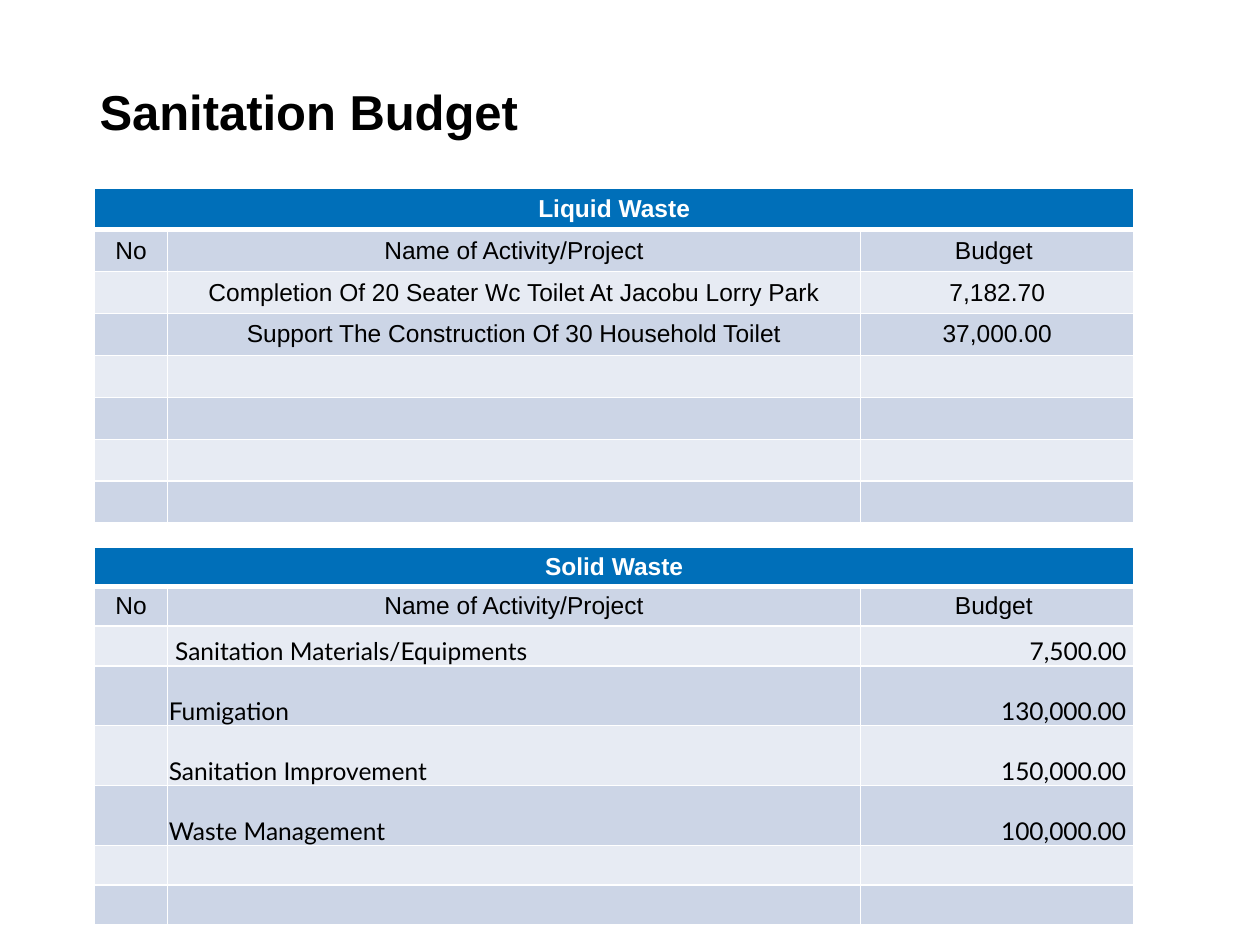
from dataclasses import dataclass

from lxml.etree import SubElement
from pptx import Presentation
from pptx.dml.color import RGBColor
from pptx.enum.text import MSO_ANCHOR as Anchor, PP_ALIGN as Align
from pptx.oxml.ns import qn
from pptx.util import Inches, Pt

SLIDE_W, SLIDE_H = 10, 7.5
LEFT = 0.075 * SLIDE_W
COLUMNS = (0.58, 5.5, 2.17)
HEADINGS = ("No", "Name of Activity/Project", "Budget ")
HEADER_BLUE, BANDS = "006FB9", ("E7EBF3", "CCD5E6")
BLACK, WHITE = "000000", "FFFFFF"


@dataclass
class CellStyle:
    font: str = "Arial"
    color: str = BLACK
    bold: bool = False
    align: Align = Align.CENTER
    anchor: Anchor = Anchor.MIDDLE
    left: float = 0.1
    right: float = 0.1
    bottom: float = 0


@dataclass
class Budget:
    title: str
    top: float
    heights: tuple[float, ...]
    items: tuple[tuple[str, str], ...]
    styles: tuple[CellStyle, CellStyle]


CENTERED = CellStyle()
HEADER = CellStyle(color=WHITE, bold=True)
ACTIVITY = CellStyle("Lato", align=Align.LEFT, anchor=Anchor.BOTTOM, left=0.01, right=0.01)
AMOUNT = CellStyle("Lato", align=Align.RIGHT, anchor=Anchor.BOTTOM, left=0.01, right=0.06)

BUDGETS = (
    Budget("Liquid Waste", 1.49, (0.333,) * 8, (
        ("Completion Of 20 Seater Wc Toilet At Jacobu Lorry Park", "7,182.70"),
        ("Support The Construction Of 30 Household Toilet", "37,000.00"),
    ), (CENTERED, CENTERED)),
    Budget("Solid Waste", 4.34, (0.315,) * 3 + (0.475,) * 3 + (0.315,) * 2, (
        (" Sanitation Materials/Equipments", "7,500.00"),
        ("Fumigation", "130,000.00"),
        ("Sanitation Improvement", "150,000.00"),
        ("Waste Management", "100,000.00"),
    ), (ACTIVITY, AMOUNT)),
)


def rgb(color: str) -> RGBColor:
    return RGBColor.from_string(color)


def draw_borders(cell, top: float = 1, bottom: float = 1) -> None:
    properties = cell._tc.get_or_add_tcPr()
    for side, width in (("L", 1), ("R", 1), ("T", top), ("B", bottom)):
        line = SubElement(properties, qn(f"a:ln{side}"), w=str(Pt(width)))
        fill = SubElement(line, qn("a:solidFill"))
        SubElement(fill, qn("a:srgbClr"), val=WHITE)


def fill_cell(cell, text: str, fill: str, style: CellStyle) -> None:
    cell.fill.solid()
    cell.fill.fore_color.rgb = rgb(fill)
    cell.vertical_anchor = style.anchor
    cell.margin_left, cell.margin_right = Inches(style.left), Inches(style.right)
    cell.margin_top, cell.margin_bottom = 0, Inches(style.bottom)
    paragraph = cell.text_frame.paragraphs[0]
    paragraph.text = text
    paragraph.alignment = style.align
    font = paragraph.font
    font.name, font.size, font.bold = style.font, Pt(14), style.bold
    font.color.rgb = rgb(style.color)


def draw_budget(slide, budget: Budget) -> None:
    table = slide.shapes.add_table(
        len(budget.heights), len(COLUMNS), Inches(LEFT), Inches(budget.top),
        Inches(sum(COLUMNS)), Inches(sum(budget.heights))).table
    table.first_row = table.horz_banding = False
    for column, width in zip(table.columns, COLUMNS):
        column.width = Inches(width)

    # Title row, headings, items, then empty rows
    contents = [(budget.title, "", ""), HEADINGS]
    contents += [("", *item) for item in budget.items]
    contents += [("", "", "")] * (len(budget.heights) - len(contents))
    for r, (height, texts) in enumerate(zip(budget.heights, contents)):
        table.rows[r].height = Inches(height)
        is_item = 2 <= r < 2 + len(budget.items)
        styles = (CENTERED, *budget.styles) if is_item else (CENTERED,) * 3
        for c, text in enumerate(texts):
            cell = table.cell(r, c)
            draw_borders(cell, 3 if r == 1 else 1, 3 if r == 0 else 1)
            fill_cell(cell, text, BANDS[r % 2] if r else HEADER_BLUE,
                      styles[c] if r else HEADER)
    table.cell(0, 0).merge(table.cell(0, len(COLUMNS) - 1))


def draw_title(slide, text: str) -> None:
    title = slide.shapes.title
    title.left, title.top = Inches(0.79), Inches(0.7)
    title.width, title.height = Inches(0.9 * SLIDE_W), Inches(0.62)
    frame = title.text_frame
    frame.margin_left = frame.margin_right = frame.margin_top = frame.margin_bottom = 0
    frame.vertical_anchor = Anchor.TOP
    frame.text = text
    paragraph = frame.paragraphs[0]
    paragraph.alignment, paragraph.line_spacing = Align.LEFT, 0.9
    font = paragraph.font
    font.name, font.size, font.bold = "Arial", Pt(28), True
    font.color.rgb = rgb(BLACK)


def main() -> None:
    deck = Presentation()
    deck.slide_width, deck.slide_height = Inches(SLIDE_W), Inches(SLIDE_H)
    slide = deck.slides.add_slide(deck.slide_layouts[5])
    draw_title(slide, "Sanitation Budget")
    for budget in BUDGETS:
        draw_budget(slide, budget)
    deck.save("out.pptx")


if __name__ == "__main__":
    main()
